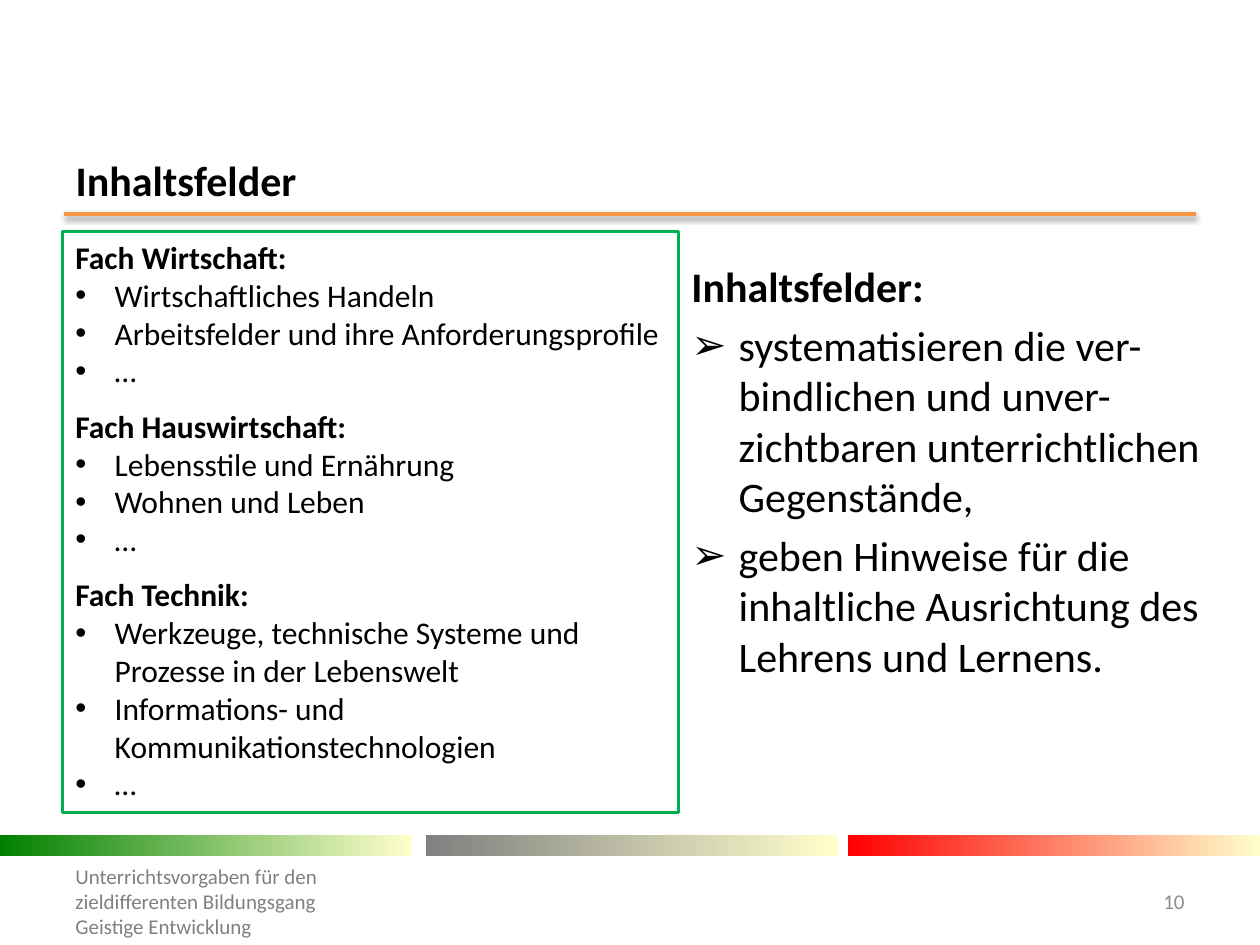
"""Build the slide on content areas for three school subjects."""
from lxml import etree
from pptx import Presentation
from pptx.dml.color import RGBColor
from pptx.enum.shapes import MSO_CONNECTOR, MSO_SHAPE
from pptx.enum.text import MSO_ANCHOR, MSO_AUTO_SIZE, PP_ALIGN
from pptx.oxml.ns import qn
from pptx.util import Pt

STRAIGHT = MSO_CONNECTOR.STRAIGHT
RECTANGLE = MSO_SHAPE.RECTANGLE
TOP, MIDDLE = MSO_ANCHOR.TOP, MSO_ANCHOR.MIDDLE
FIXED, GROW = MSO_AUTO_SIZE.NONE, MSO_AUTO_SIZE.SHAPE_TO_FIT_TEXT
LEFT, RIGHT = PP_ALIGN.LEFT, PP_ALIGN.RIGHT

BLACK = RGBColor(0x00, 0x00, 0x00)
WHITE = RGBColor(0xFF, 0xFF, 0xFF)
ORANGE = RGBColor(0xF7, 0x96, 0x46)
FRAME_GREEN = RGBColor(0x00, 0xB0, 0x50)
GREEN = RGBColor(0x00, 0x80, 0x00)
GREY = RGBColor(0x80, 0x80, 0x80)
RED = RGBColor(0xFF, 0x00, 0x00)
CREAM = RGBColor(0xFF, 0xFF, 0xCC)
NUMBER_GREY = RGBColor(0x8C, 0x8C, 0x8C)
FONT = "Calibri"

BANDS = [(0, GREEN), (243.4, GREY), (484.6, RED)]
SUBJECTS = [
    ("Fach Wirtschaft:", ["Wirtschaftliches Handeln",
                          "Arbeitsfelder und ihre Anforderungsprofile", "…"]),
    ("Fach Hauswirtschaft:", ["Lebensstile und Ernährung", "Wohnen und Leben", "…"]),
    ("Fach Technik:", ["Werkzeuge, technische Systeme und Prozesse in der Lebenswelt",
                       "Informations- und Kommunikationstechnologien", "…"]),
]
PURPOSES = [
    "systematisieren die ver-bindlichen und unver-zichtbaren unterrichtlichen Gegenstände,",
    "geben Hinweise für die inhaltliche Ausrichtung des Lehrens und Lernens.",
]
FOOTER = ["Unterrichtsvorgaben für den", "zieldifferenten Bildungsgang",
          "Geistige Entwicklung"]


def set_bullet(paragraph, bullet, indent):
    """Give a paragraph a bullet character and a hanging indent."""
    properties = paragraph._p.get_or_add_pPr()
    properties.set("marL", str(Pt(indent)))
    properties.set("indent", str(-Pt(indent)))
    etree.SubElement(properties, qn("a:buFont"), typeface="Arial")
    etree.SubElement(properties, qn("a:buChar"), char=bullet)


def write(frame, text, size, color=BLACK, bold=False, align=LEFT, before=0,
          bullet=None, indent=0):
    """Write one paragraph, using the empty first paragraph when there is one."""
    first = frame.paragraphs[0]
    is_first = not first.runs
    paragraph = first if is_first else frame.add_paragraph()
    if bullet:
        set_bullet(paragraph, bullet, indent)
    paragraph.alignment = align
    paragraph.space_before = Pt(0 if is_first else before)
    run = paragraph.add_run()
    run.text = text
    run.font.name, run.font.size, run.font.bold = FONT, Pt(size), bold
    run.font.color.rgb = color


def add_box(slide, left, top, width, height, anchor=TOP, auto_size=FIXED):
    """Add a wrapping text box."""
    box = slide.shapes.add_textbox(Pt(left), Pt(top), Pt(width), Pt(height))
    box.text_frame.word_wrap = True
    box.text_frame.auto_size = auto_size
    box.text_frame.vertical_anchor = anchor
    return box


def add_title_rule(slide):
    """Draw the orange rule with its soft shadow."""
    rule = slide.shapes.add_connector(STRAIGHT, Pt(36.7), Pt(122.4), Pt(683.3), Pt(122.4))
    rule.line.color.rgb = ORANGE
    rule.line.width = Pt(2)
    effects = etree.SubElement(rule._element.spPr, qn("a:effectLst"))
    shadow = etree.SubElement(effects, qn("a:outerShdw"), blurRad=str(Pt(3.1)),
                              dist=str(Pt(1.6)), dir="5400000", rotWithShape="0")
    tint = etree.SubElement(shadow, qn("a:srgbClr"), val=str(BLACK))
    etree.SubElement(tint, qn("a:alpha"), val="38000")


def add_band(slide, left, color):
    """Add a footer band that fades to cream."""
    band = slide.shapes.add_shape(RECTANGLE, Pt(left), Pt(477.4), Pt(235.4), Pt(11.5))
    band.shadow.inherit = False
    band.line.fill.background()
    band.fill.gradient()
    band.fill.gradient_angle = 0
    for stop, position, shade in zip(band.fill.gradient_stops, (0, 1), (color, CREAM)):
        stop.position = position
        stop.color.rgb = shade


def add_title(slide, text):
    """Place and format the title."""
    title = slide.shapes.title
    title.left, title.top, title.width, title.height = Pt(36), Pt(88.6), Pt(648), Pt(28)
    title.text_frame.auto_size = FIXED
    title.text_frame.vertical_anchor = MIDDLE
    write(title.text_frame, text, 24, bold=True)


def add_purposes(slide):
    """Add the column on what content areas are for."""
    box = add_box(slide, 388, 145.4, 306, 306)
    box.fill.solid()
    box.fill.fore_color.rgb = WHITE
    write(box.text_frame, "Inhaltsfelder:", 24, bold=True)
    for purpose in PURPOSES:
        write(box.text_frame, purpose, 24, before=4.8, bullet="➢", indent=27)


def add_subjects(slide):
    """Add the framed list of subjects and their content areas."""
    box = add_box(slide, 36, 132.5, 352, 332, auto_size=GROW)
    box.line.color.rgb = FRAME_GREEN
    box.line.width = Pt(1.75)
    for subject, areas in SUBJECTS:
        write(box.text_frame, subject, 18, bold=True, before=10)
        for area in areas:
            write(box.text_frame, area, 18, bullet="•", indent=22.5)


def add_footer(slide):
    """Add the footer lines and the page number."""
    footer = add_box(slide, 36, 500.4, 409, 28.8, MIDDLE)
    for line in FOOTER:
        write(footer.text_frame, line, 12, GREY)
    number = add_box(slide, 638, 500.4, 46, 28.8, MIDDLE)
    write(number.text_frame, "10", 12, NUMBER_GREY, align=RIGHT)


def main():
    """Build and save the slide."""
    presentation = Presentation()
    presentation.slide_width, presentation.slide_height = Pt(720), Pt(540)
    slide = presentation.slides.add_slide(presentation.slide_layouts[5])
    add_title_rule(slide)
    for left, color in BANDS:
        add_band(slide, left, color)
    add_title(slide, "Inhaltsfelder")
    add_purposes(slide)
    add_footer(slide)
    add_subjects(slide)
    presentation.save("out.pptx")


if __name__ == "__main__":
    main()
